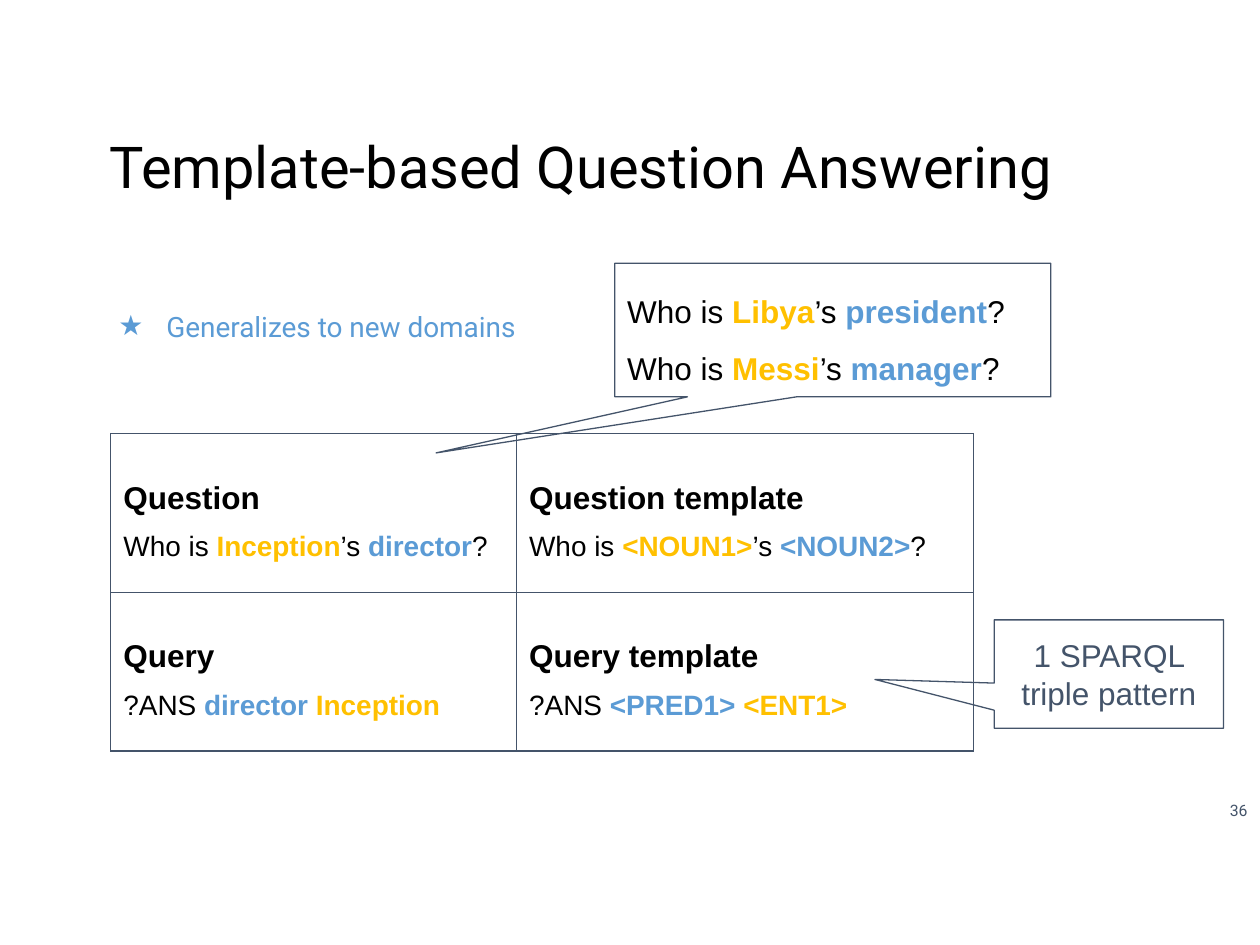
import pptx
import pptx.dml.color
import pptx.enum.shapes
import pptx.enum.text
import pptx.oxml
import pptx.oxml.ns
import pptx.util

Inches, Pt = pptx.util.Inches, pptx.util.Pt
Align = pptx.enum.text.PP_ALIGN
Anchor = pptx.enum.text.MSO_ANCHOR
CALLOUT = pptx.enum.shapes.MSO_SHAPE.ROUNDED_RECTANGULAR_CALLOUT

COLORS = {"ink": "000000", "slate": "44546A", "gold": "FFC000", "blue": "5B9BD5"}


def color(name):
    return pptx.dml.color.RGBColor.from_string(COLORS[name])


def assign(item, values):
    for key, value in values.items():
        setattr(item, key, value)


class Page:
    frame = {"word_wrap": True, "auto_size": pptx.enum.text.MSO_AUTO_SIZE.NONE}
    inset = {f"margin_{side}": Inches(0.1) for side in ("left", "right", "top", "bottom")}
    edge = Pt(0.75)

    def __init__(self, deck):
        self.slide = deck.slides.add_slide(deck.slide_layouts[1])

    def place(self, shape, box):
        names = ("left", "top", "width", "height")
        assign(shape, dict(zip(names, map(Inches, box))))

    def label(self, frame, lines, anchor=Anchor.TOP, align=Align.LEFT, gap=1.0, face="Arial"):
        """Each line is (size, [(text, color, bold), ...])."""
        assign(frame, self.frame | self.inset | {"vertical_anchor": anchor})
        self.fill(frame, lines, align, gap, face)

    def fill(self, frame, lines, align, gap, face):
        for i, (size, parts) in enumerate(lines):
            para = frame.add_paragraph() if i else frame.paragraphs[0]
            assign(para, {"alignment": align, "line_spacing": gap, "space_before": Pt(0)})
            for text, tint, bold in parts:
                run = para.add_run()
                run.text = text
                assign(run.font, {"name": face, "size": Pt(size), "bold": bold})
                run.font.color.rgb = color(tint)

    def title(self, box, text):
        shape = self.slide.shapes.title
        self.place(shape, box)
        self.label(shape.text_frame, [(33, [(text, "ink", False)])], gap=0.9, face="Roboto")

    def bullet(self, box, text, mark, tint):
        shape = self.slide.placeholders[1]
        self.place(shape, box)
        self.label(shape.text_frame, [(16, [(text, tint, False)])], gap=1.5, face="Roboto")
        props = shape.text_frame.paragraphs[0]._p.get_or_add_pPr()
        props.set("marL", str(Inches(0.5)))
        props.set("indent", str(Inches(-0.38)))
        space = pptx.oxml.ns.nsdecls("a")
        for xml in (
            f'<a:buClr {space}><a:srgbClr val="{COLORS[tint]}"/></a:buClr>',
            f'<a:buChar {space} char="{mark}"/>',
        ):
            props.append(pptx.oxml.parse_xml(xml))

    def number(self, box, text):
        shape = self.slide.shapes.add_textbox(*map(Inches, box))
        self.label(shape.text_frame, [(9, [(text, "slate", False)])],
                   Anchor.MIDDLE, Align.RIGHT, face="Roboto")

    def callout(self, box, tip, lines, **style):
        shape = self.slide.shapes.add_shape(CALLOUT, *map(Inches, box))
        shape.shadow.inherit = False
        shape.fill.background()
        shape.line.color.rgb = color("slate")
        shape.line.width = self.edge
        for i, value in enumerate((*tip, 0)):
            shape.adjustments[i] = value
        self.label(shape.text_frame, lines, Anchor.MIDDLE, **style)

    def table(self, spot, widths, height, rows):
        box = (*spot, sum(widths), height * len(rows))
        table = self.slide.shapes.add_table(len(rows), len(widths), *map(Inches, box)).table
        assign(table, {"first_row": False, "horz_banding": False})
        for col, width in zip(table.columns, widths):
            col.width = Inches(width)
        for row, cells in zip(table.rows, rows):
            row.height = Inches(height)
            for cell, lines in zip(row.cells, cells):
                self.border(cell)
                cell.fill.background()
                assign(cell, {key: 0 for key in self.inset})
                assign(cell, {"margin_left": Inches(0.1), "vertical_anchor": Anchor.MIDDLE})
                self.fill(cell.text_frame, lines, Align.LEFT, 1.5, "Arial")

    def border(self, cell):
        props = cell._tc.get_or_add_tcPr()
        for side in "LRTB":
            props.append(pptx.oxml.parse_xml(
                f'<a:ln{side} {pptx.oxml.ns.nsdecls("a")} w="{self.edge}"><a:solidFill>'
                f'<a:srgbClr val="{COLORS["slate"]}"/></a:solidFill></a:ln{side}>'))


def ask(size, noun, role):
    return (size, [("Who is ", "ink", False), (noun, "gold", True), ("’s ", "ink", False),
                   (role, "blue", True), ("?", "ink", False)])


def query(pred, ent):
    return (16, [("?ANS ", "ink", False), (pred + " ", "blue", True), (ent, "gold", True)])


def head(text):
    return (18, [(text, "ink", True)])


def main():
    deck = pptx.Presentation()
    assign(deck, {"slide_width": Inches(10), "slide_height": Inches(7.5)})
    page = Page(deck)

    # Title, bullet and page number
    page.bullet((0.72, 2.22, 8.54, 1.18), "Generalizes to new domains", "★", "blue")
    page.title((0.77, 1, 9.03, 0.63), "Template-based Question Answering")
    page.number((9.58, 6.3, 0.42, 0.26), "36")

    # Questions and queries beside their templates
    page.table((0.88, 3.44), (3.22, 3.63), 1.26, [
        [[head("Question"), ask(16, "Inception", "director")],
         [head("Question template"), ask(16, "<NOUN1>", "<NOUN2>")]],
        [[head("Query"), query("director", "Inception")],
         [head("Query template"), query("<PRED1>", "<ENT1>")]],
    ])

    # Callouts
    page.callout((4.88, 2.09, 3.46, 1.06), (-0.91, 0.92),
                 [ask(18, "Libya", "president"), ask(18, "Messi", "manager")], gap=1.5)
    page.callout((7.89, 4.92, 1.82, 0.86), (-1.02, 0.05),
                 [(18, [("1 SPARQL triple pattern", "slate", False)])], align=Align.CENTER)

    deck.save("out.pptx")


if __name__ == "__main__":
    main()
